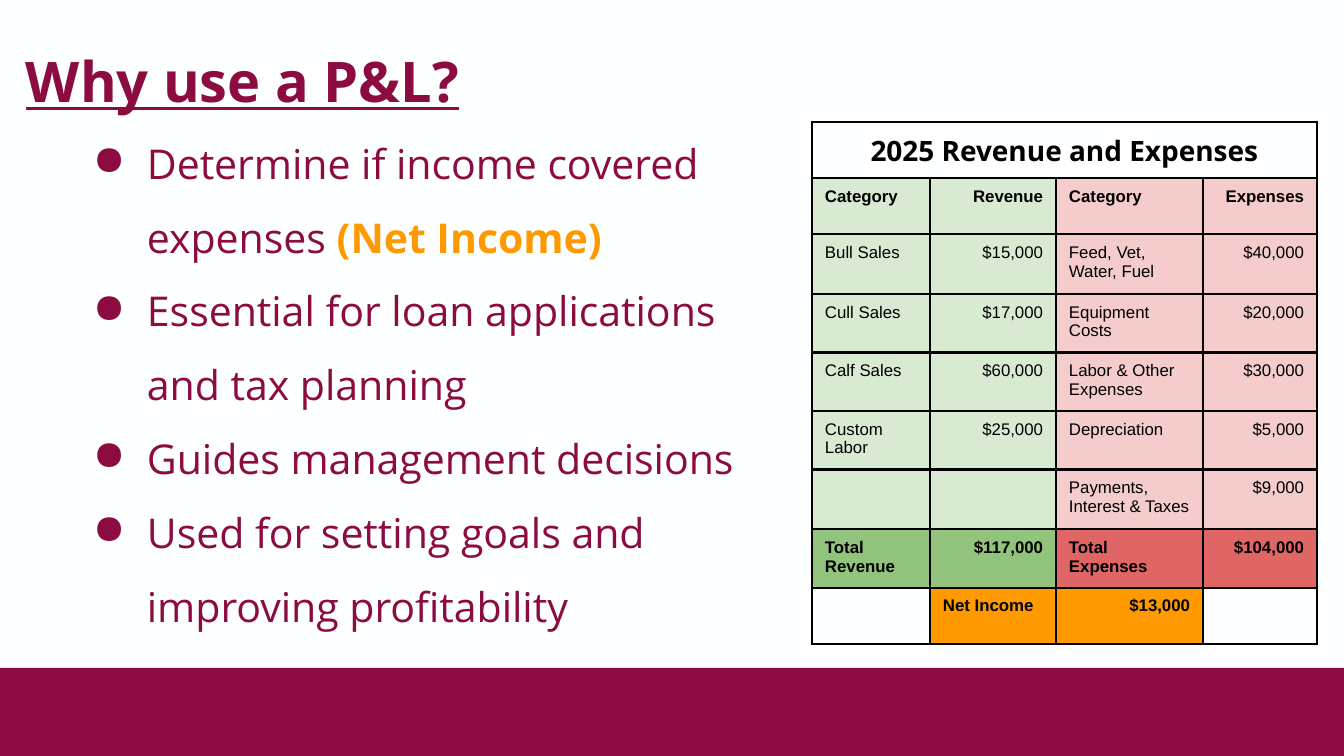
"""Build a slide explaining why a P&L is useful, with a revenue and expenses table."""
from dataclasses import dataclass
from typing import NamedTuple

from lxml.etree import SubElement
from pptx import Presentation
from pptx.dml.color import RGBColor
from pptx.enum.shapes import MSO_SHAPE as Preset
from pptx.enum.text import MSO_ANCHOR as Anchor, PP_ALIGN as Align
from pptx.oxml import parse_xml
from pptx.oxml.ns import nsdecls, qn
from pptx.util import Emu, Pt

EMU_PER_PX = 914400 / 134.4


@dataclass(frozen=True)
class Theme:
    paper: str = "FEFFFF"
    maroon: str = "8C0B41"
    orange: str = "FF9900"
    black: str = "000000"
    light_green: str = "D9EAD3"
    green: str = "93C47D"
    light_red: str = "F4CCCC"
    red: str = "E06666"
    heading_font: str = "Open Sans"
    table_font: str = "Arial"
    title_size: int = 30
    bullet_size: int = 22
    caption_size: int = 15
    cell_size: int = 9
    border_width: float = 1.5


THEME = Theme()


class Box(NamedTuple):
    left: int
    top: int
    width: int
    height: int


class Style(NamedTuple):
    font: str
    size: int
    color: str
    bold: bool = False
    underline: bool = False


class Row(NamedTuple):
    height: int
    texts: tuple[str, ...]
    fills: tuple[str, ...]
    bold: bool = False


TITLE = Style(THEME.heading_font, THEME.title_size, THEME.maroon, True, True)
BULLET = Style(THEME.heading_font, THEME.bullet_size, THEME.maroon)
HIGHLIGHT = BULLET._replace(color=THEME.orange, bold=True)
CAPTION = Style(THEME.heading_font, THEME.caption_size, THEME.black, True)
CELL = Style(THEME.table_font, THEME.cell_size, THEME.black)

BULLETS = (
    (("Determine if income covered expenses ", BULLET), ("(Net Income)", HIGHLIGHT)),
    (("Essential for loan applications and tax planning", BULLET),),
    (("Guides management decisions", BULLET),),
    (("Used for setting goals and improving profitability", BULLET),),
)

PALE = (THEME.light_green,) * 2 + (THEME.light_red,) * 2
STRONG = (THEME.green,) * 2 + (THEME.red,) * 2
NET = (THEME.paper, THEME.orange, THEME.orange, THEME.paper)
COLUMN_WIDTHS = (118, 126, 147, 114)
ROWS = (
    Row(56, ("2025 Revenue and Expenses", "", "", ""), (THEME.paper,) * 4, True),
    Row(56, ("Category", "Revenue", "Category", "Expenses"), PALE, True),
    Row(60, ("Bull Sales", "$15,000", "Feed, Vet, Water, Fuel", "$40,000"), PALE),
    Row(42, ("Cull Sales", "$17,000", "Equipment Costs", "$20,000"), PALE),
    Row(42, ("Calf Sales", "$60,000", "Labor & Other Expenses", "$30,000"), PALE),
    Row(42, ("Custom Labor", "$25,000", "Depreciation", "$5,000"), PALE),
    Row(60, ("", "", "Payments, Interest & Taxes", "$9,000"), PALE),
    Row(50, ("Total Revenue", "$117,000", "Total Expenses", "$104,000"), STRONG, True),
    Row(56, ("", "Net Income", "$13,000", ""), NET, True),
)


def px(length: float) -> Emu:
    return Emu(round(length * EMU_PER_PX))


def place(box: Box) -> tuple[Emu, ...]:
    return tuple(px(length) for length in box)


def rgb(color: str) -> RGBColor:
    return RGBColor.from_string(color)


def apply_style(font, style: Style) -> None:
    font.name, font.size = style.font, Pt(style.size)
    font.bold, font.underline = style.bold, style.underline
    font.color.rgb = rgb(style.color)


def add_run(paragraph, text: str, style: Style):
    run = paragraph.add_run()
    run.text = text
    apply_style(run.font, style)
    return run


def set_indent(paragraph, left: int, first: int = 0) -> None:
    properties = paragraph._p.get_or_add_pPr()
    properties.set("marL", str(px(left)))
    properties.set("indent", str(px(first)))


def add_text_frame(slide, box: Box, inset_y: int, anchor: Anchor):
    frame = slide.shapes.add_textbox(*place(box)).text_frame
    frame.word_wrap = True
    frame.vertical_anchor = anchor
    frame.margin_left = frame.margin_right = px(13)
    frame.margin_top = frame.margin_bottom = px(inset_y)
    return frame


def add_bar(slide, box: Box) -> None:
    shape = slide.shapes.add_shape(Preset.RECTANGLE, *place(box))
    shape.shadow.inherit = False
    shape.fill.solid()
    shape.fill.fore_color.rgb = rgb(THEME.maroon)
    shape.line.fill.background()


def add_title(slide, box: Box) -> None:
    paragraph = add_text_frame(slide, box, 13, Anchor.TOP).paragraphs[0]
    set_indent(paragraph, 13)
    paragraph.line_spacing = 1.5
    run = add_run(paragraph, "Why use a P&L?", TITLE)
    shadow = parse_xml(
        f'<a:effectLst {nsdecls("a")}><a:outerShdw blurRad="57150" dist="38100" dir="5400000">'
        f'<a:srgbClr val="{THEME.black}"><a:alpha val="50000"/></a:srgbClr>'
        "</a:outerShdw></a:effectLst>"
    )
    run.font._element.find(qn("a:solidFill")).addnext(shadow)


def add_bullets(slide, box: Box) -> None:
    frame = add_text_frame(slide, box, 7, Anchor.MIDDLE)
    for index, parts in enumerate(BULLETS):
        paragraph = frame.add_paragraph() if index else frame.paragraphs[0]
        set_indent(paragraph, 134, -54)
        properties = paragraph._p.get_or_add_pPr()
        bullet_color = SubElement(properties, qn("a:buClr"))
        SubElement(bullet_color, qn("a:srgbClr"), val=THEME.maroon)
        SubElement(properties, qn("a:buChar"), char="●")
        paragraph.line_spacing = 1.5
        for text, style in parts:
            add_run(paragraph, text, style)


def format_cell(cell, fill: str) -> None:
    properties = cell._tc.get_or_add_tcPr()
    for side in ("lnL", "lnR", "lnT", "lnB"):
        line = SubElement(properties, qn(f"a:{side}"), w=str(Pt(THEME.border_width)))
        SubElement(SubElement(line, qn("a:solidFill")), qn("a:srgbClr"), val=THEME.black)
    cell.fill.solid()
    cell.fill.fore_color.rgb = rgb(fill)
    cell.margin_left = cell.margin_right = px(13)
    cell.margin_top = cell.margin_bottom = px(9)


def add_finance_table(slide, left: int, top: int) -> None:
    box = Box(left, top, sum(COLUMN_WIDTHS), sum(row.height for row in ROWS))
    table = slide.shapes.add_table(len(ROWS), len(COLUMN_WIDTHS), *place(box)).table
    table.first_row = table.horz_banding = False
    for column, width in zip(table.columns, COLUMN_WIDTHS):
        column.width = px(width)
    for row_index, row in enumerate(ROWS):
        table.rows[row_index].height = px(row.height)
        style = CELL._replace(bold=row.bold) if row_index else CAPTION
        for column_index, (text, fill) in enumerate(zip(row.texts, row.fills)):
            cell = table.cell(row_index, column_index)
            format_cell(cell, fill)
            paragraph = cell.text_frame.paragraphs[0]
            if not text:
                apply_style(paragraph.font, style)
                continue
            is_amount = column_index % 2 == 1 or text.startswith("$")
            paragraph.alignment = Align.RIGHT if is_amount and text != "Net Income" else Align.LEFT
            add_run(paragraph, text, style)
    table.cell(0, 0).merge(table.cell(0, len(COLUMN_WIDTHS) - 1))
    table.cell(0, 0).text_frame.paragraphs[0].alignment = Align.CENTER


def main() -> None:
    presentation = Presentation()
    presentation.slide_width, presentation.slide_height = px(1344), px(756)
    slide = presentation.slides.add_slide(presentation.slide_layouts[6])
    slide.background.fill.solid()
    slide.background.fill.fore_color.rgb = rgb(THEME.paper)
    add_bar(slide, Box(0, 668, 1344, 88))
    add_bullets(slide, Box(0, 112, 792, 520))
    add_title(slide, Box(0, 0, 1344, 101))
    add_finance_table(slide, 812, 122)
    presentation.save("out.pptx")


if __name__ == "__main__":
    main()
